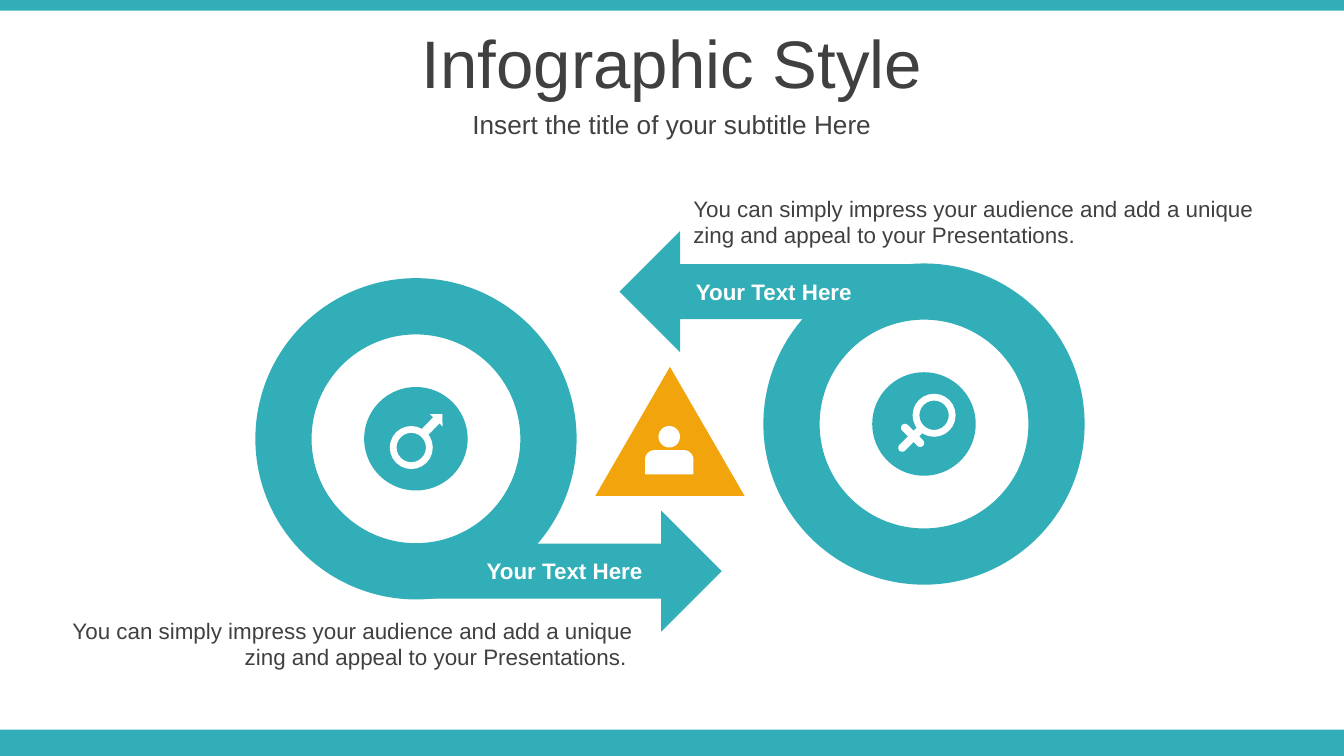
import math
from dataclasses import dataclass

import pptx
import pptx.dml.color
import pptx.enum.shapes
import pptx.enum.text
import pptx.util

Inches = pptx.util.Inches
Shape = pptx.enum.shapes.MSO_SHAPE
Align = pptx.enum.text.PP_ALIGN
Anchor = pptx.enum.text.MSO_ANCHOR

TEAL, ORANGE, WHITE, GREY = "32AEB8", "F2A40D", "FFFFFF", "404040"
MESSAGE = ("You can simply impress your audience and add a unique "
           "zing and appeal to your Presentations.")
LABEL = "Your Text Here"


@dataclass
class Figure:
    kind: int
    left: float
    top: float
    width: float
    height: float
    color: str = TEAL
    adjustments: tuple = ()
    rotation: float = 0


@dataclass
class Caption:
    text: str
    left: float
    top: float
    width: float
    height: float
    align: int
    color: str = GREY
    bold: bool = False


def rgb(color: str) -> pptx.dml.color.RGBColor:
    return pptx.dml.color.RGBColor.from_string(color)


def paint(shape, color: str) -> None:
    shape.shadow.inherit = False
    shape.fill.solid()
    shape.fill.fore_color.rgb = rgb(color)
    shape.line.fill.background()


def place(shape, left: float, top: float, width: float, height: float) -> None:
    shape.left, shape.top = Inches(left), Inches(top)
    shape.width, shape.height = Inches(width), Inches(height)


def write(box, text: str, size: float, align: int, color: str = GREY,
          bold: bool = False) -> None:
    frame = box.text_frame
    frame.word_wrap = True
    frame.text = text
    para = frame.paragraphs[0]
    para.alignment = align
    para.space_before = pptx.util.Pt(0)
    for span in para.runs:
        span.font.name = "Arial"
        span.font.size = pptx.util.Pt(size)
        span.font.bold = bold
        span.font.color.rgb = rgb(color)


def draw_figure(page, figure: Figure) -> None:
    shape = page.shapes.add_shape(
        figure.kind, Inches(figure.left), Inches(figure.top),
        Inches(figure.width), Inches(figure.height))
    for index, value in enumerate(figure.adjustments):
        shape.adjustments[index] = value
    shape.rotation = figure.rotation
    paint(shape, figure.color)


def draw_caption(page, caption: Caption) -> None:
    box = page.shapes.add_textbox(
        Inches(caption.left), Inches(caption.top),
        Inches(caption.width), Inches(caption.height))
    write(box, caption.text, 12, caption.align, caption.color, caption.bold)


def arc(x: float, y: float, radius: float, start: int, end: int) -> list:
    """Points along a clockwise arc, angles in degrees."""
    return [(Inches(x + radius * math.cos(math.radians(angle))),
             Inches(y + radius * math.sin(math.radians(angle))))
            for angle in range(start, end + 1, 10)]


def draw_person(page, left: float, top: float, size: float) -> None:
    right, bottom = left + size, top + size
    corner, shoulder = 0.07, top + 0.18
    body = (arc(left + corner, shoulder + corner, corner, 180, 270)
            + arc(right - corner, shoulder + corner, corner, 270, 360)
            + [(Inches(right), Inches(bottom)), (Inches(left), Inches(bottom))])
    head = arc(left + size / 2, top + 0.08, 0.08, 0, 360)
    builder = page.shapes.build_freeform(*body[0])
    builder.add_line_segments(body[1:], close=True)
    builder.move_to(*head[0])
    builder.add_line_segments(head[1:], close=True)
    paint(builder.convert_to_shape(), WHITE)


def loop(left: float, top: float, arrow_left: float, arrow_top: float,
         rotation: float) -> list:
    """A ring with its outgoing arrow and a disc in the middle."""
    ring, disc = 2.39, 0.77
    inset = (ring - disc) / 2
    return [
        Figure(Shape.DONUT, left, top, ring, ring, TEAL, (0.175,), rotation),
        Figure(Shape.RIGHT_ARROW, arrow_left, arrow_top, 2.17, 0.9, TEAL,
               (0.455, 0.5), rotation),
        Figure(Shape.OVAL, left + inset, top + inset, disc, disc),
    ]


def main() -> None:
    # Widescreen page, 16:9
    deck = pptx.Presentation()
    deck.slide_width = Inches(10)
    deck.slide_height = deck.slide_width * 9 // 16
    page = deck.slides.add_slide(deck.slide_layouts[0])

    # Title and subtitle
    title, subtitle = page.placeholders
    for box, text, top, height, size in (
            (title, "Infographic Style", 0.14, 0.63, 36),
            (subtitle, "Insert the title of your subtitle Here", 0.77, 0.31, 14)):
        place(box, 0, top, 10, height)
        write(box, text, size, Align.CENTER)
        box.text_frame.vertical_anchor = Anchor.MIDDLE
        box.text_frame.auto_size = pptx.enum.text.MSO_AUTO_SIZE.NONE

    # Edge bars, both loops and the central triangle
    figures = [
        Figure(Shape.RECTANGLE, 0, 5.43, 10, 0.2),
        Figure(Shape.RECTANGLE, 0, 0, 10, 0.08),
        *loop(1.9, 2.07, 3.2, 3.8, 0),
        *loop(5.68, 1.96, 4.61, 1.72, 180),
        Figure(Shape.ISOSCELES_TRIANGLE, 4.43, 2.73, 1.11, 0.96, ORANGE),
        # Male symbol
        Figure(Shape.DONUT, 2.9, 3.17, 0.32, 0.32, WHITE, (0.158,)),
        Figure(Shape.UP_ARROW, 3.15, 3.05, 0.13, 0.22, WHITE, (), 43.9),
        # Female symbol
        Figure(Shape.DONUT, 6.79, 2.93, 0.32, 0.32, WHITE, (0.158,)),
        Figure(Shape.ROUNDED_RECTANGLE, 6.75, 3.14, 0.06, 0.25, WHITE, (0.5,), 45),
        Figure(Shape.ROUNDED_RECTANGLE, 6.76, 3.13, 0.06, 0.22, WHITE, (0.5,), 135),
    ]
    for figure in figures:
        draw_figure(page, figure)
    draw_person(page, 4.8, 3.17, 0.36)

    # Descriptions and arrow labels
    captions = [
        Caption(MESSAGE, 5.06, 1.4, 4.41, 0.5, Align.LEFT),
        Caption(MESSAGE + " ", 0.4, 4.54, 4.41, 0.5, Align.RIGHT),
        Caption(LABEL, 2.32, 4.1, 2.56, 0.3, Align.RIGHT, WHITE, True),
        Caption(LABEL, 5.08, 2.02, 2.56, 0.3, Align.LEFT, WHITE, True),
    ]
    for caption in captions:
        draw_caption(page, caption)

    deck.save("out.pptx")


if __name__ == "__main__":
    main()
